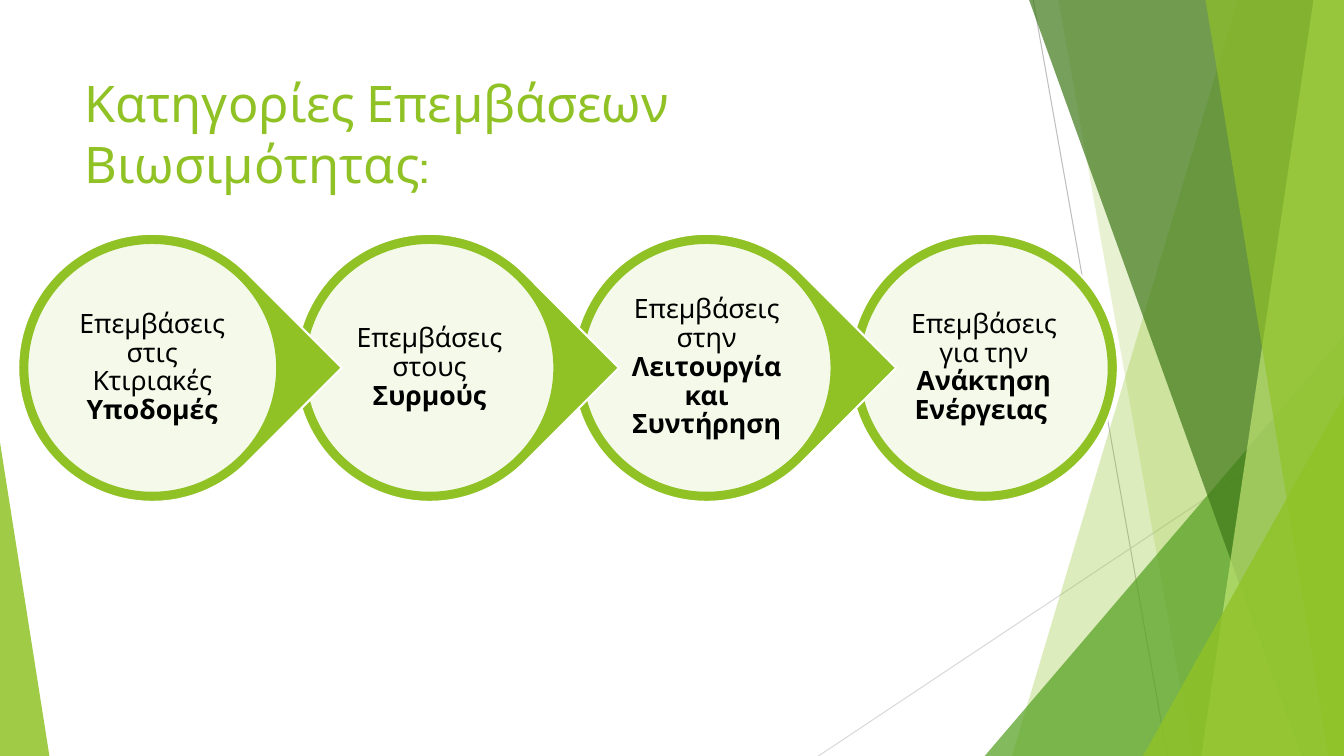
from lxml.etree import SubElement
from pptx import Presentation
from pptx.dml.color import RGBColor
from pptx.enum.shapes import MSO_CONNECTOR, MSO_SHAPE
from pptx.enum.text import MSO_ANCHOR, PP_ALIGN
from pptx.oxml.ns import qn
from pptx.util import Pt

SLIDE_W, SLIDE_H = 960, 540
GREEN = "90C226"
WHITE = "FFFFFF"
FONT = "Cabin"

CATEGORIES = [
    ("Επεμβάσεις στις Κτιριακές ", "Υποδομές"),
    ("Επεμβάσεις στους ", "Συρμούς"),
    ("Επεμβάσεις στην ", "Λειτουργία και Συντήρηση"),
    ("Επεμβάσεις για την ", "Ανάκτηση Ενέργειας "),
]


def color(hex_value):
    return RGBColor.from_string(hex_value)


def paint(shape, fill, opacity=100, outline=None):
    shape.shadow.inherit = False
    shape.fill.solid()
    shape.fill.fore_color.rgb = color(fill)
    if opacity < 100:
        tint = shape._element.spPr.find(qn("a:solidFill"))[0]
        SubElement(tint, qn("a:alpha"), val=str(opacity * 1000))
    if outline:
        shape.line.color.rgb = color(outline)
        shape.line.width = Pt(1.5)
    else:
        shape.line.fill.background()


def add_preset(slide, kind, left, top, width, height):
    return slide.shapes.add_shape(kind, Pt(left), Pt(top), Pt(width), Pt(height))


def add_text(slide, box, runs, size, ink, inset):
    left, top, width, height = box
    text_box = slide.shapes.add_textbox(Pt(left), Pt(top), Pt(width), Pt(height))
    frame = text_box.text_frame
    frame.word_wrap = True
    frame.margin_left = frame.margin_right = Pt(inset[0])
    frame.margin_top = frame.margin_bottom = Pt(inset[1])
    paragraph = frame.paragraphs[0]
    for words, bold in runs:
        run = paragraph.add_run()
        run.text = words
        run.font.name = FONT
        run.font.size = Pt(size)
        run.font.bold = bold
        run.font.color.rgb = color(ink)
    return frame


def add_thin_line(slide, start, end, ink):
    line = slide.shapes.add_connector(
        MSO_CONNECTOR.STRAIGHT, *(Pt(value) for value in (*start, *end)))
    line.line.color.rgb = color(ink)
    line.line.width = Pt(0.75)
    SubElement(line._element.spPr, qn("a:effectLst"))


def add_panel(slide, box, top_x, bottom_x, fill, opacity):
    """A panel with a slanted left side that fills the box to its right edge."""
    left, top, width, height = box
    right, bottom = left + width, top + height
    outline = slide.shapes.build_freeform(Pt(top_x), Pt(top), scale=1.0)
    corners = [(right, top), (right, bottom), (bottom_x, bottom)]
    outline.add_line_segments([(Pt(x), Pt(y)) for x, y in corners], close=True)
    paint(outline.convert_to_shape(), fill, opacity)


def add_corner(slide, box, left, right, top, apex, fill, opacity):
    """A triangle that stands on the bottom of the box."""
    bottom = box[1] + box[3]
    corner = add_preset(slide, MSO_SHAPE.ISOSCELES_TRIANGLE,
                        left, top, right - left, bottom - top)
    corner.adjustments[0] = apex
    paint(corner, fill, opacity)


def add_backdrop(slide, box):
    left, top, width, height = box
    right, bottom = left + width, top + height
    add_thin_line(slide, (738, top), (833.8, bottom), "BFBFBF")
    add_thin_line(slide, (right, 290.2), (584.6, bottom), "D9D9D9")
    add_panel(slide, box, 884.2, 722.9, GREEN, 30)
    add_panel(slide, box, 756, 851.8, GREEN, 20)
    add_corner(slide, box, 703.4, right, 239.8, 1, "54A021", 72)
    add_panel(slide, box, 735.1, 929.5, "3F7819", 70)
    add_panel(slide, box, 938.2, 858.2, "C0E474", 70)
    add_panel(slide, box, 861.1, 949, GREEN, 65)
    add_corner(slide, box, 816.5, right, 283, 1, GREEN, 80)
    add_corner(slide, box, left, 35.3, 316, 0, GREEN, 85)


def add_title(slide, box):
    add_text(slide, box, [("Κατηγορίες Επεμβάσεων Βιωσιμότητας:", False)],
             36, GREEN, (7.2, 3.6))


def add_category(slide, left, top, size, runs, is_last):
    # Outer ring, pointing at the next category
    ring_kind = MSO_SHAPE.OVAL if is_last else MSO_SHAPE.TEAR
    ring = add_preset(slide, ring_kind, left, top, size, size)
    ring.rotation = 0 if is_last else 45
    paint(ring, GREEN, outline=WHITE)

    # Pale disc
    rim = 6.5
    disc_size = size - 2 * rim
    disc = add_preset(slide, MSO_SHAPE.OVAL, left + rim, top + rim, disc_size, disc_size)
    paint(disc, WHITE, 90, GREEN)

    # Label
    pad = 32
    label_size = size - 2 * pad
    frame = add_text(slide, (left + pad, top + pad, label_size, label_size),
                     runs, 19, "000000", (2, 2))
    frame.vertical_anchor = MSO_ANCHOR.MIDDLE
    frame.paragraphs[0].alignment = PP_ALIGN.CENTER
    frame.paragraphs[0].line_spacing = 0.9


def add_category_chain(slide, box):
    left, top, width, size = box
    last = len(CATEGORIES) - 1
    pitch = (width - size) / last
    # Right to left, so that each point lies over the next ring
    for index in range(last, -1, -1):
        plain, strong = CATEGORIES[index]
        add_category(slide, left + index * pitch, top, size,
                     [(plain, False), (strong, True)], index == last)


def main():
    presentation = Presentation()
    presentation.slide_width = Pt(SLIDE_W)
    presentation.slide_height = Pt(SLIDE_H)
    slide = presentation.slides.add_slide(presentation.slide_layouts[6])
    add_backdrop(slide, (0, 0, SLIDE_W, SLIDE_H))
    add_category_chain(slide, (13, 167, 785.5, 191.5))
    add_title(slide, (53.3, 48.2, 676.8, 58.3))
    presentation.save("out.pptx")


if __name__ == "__main__":
    main()
